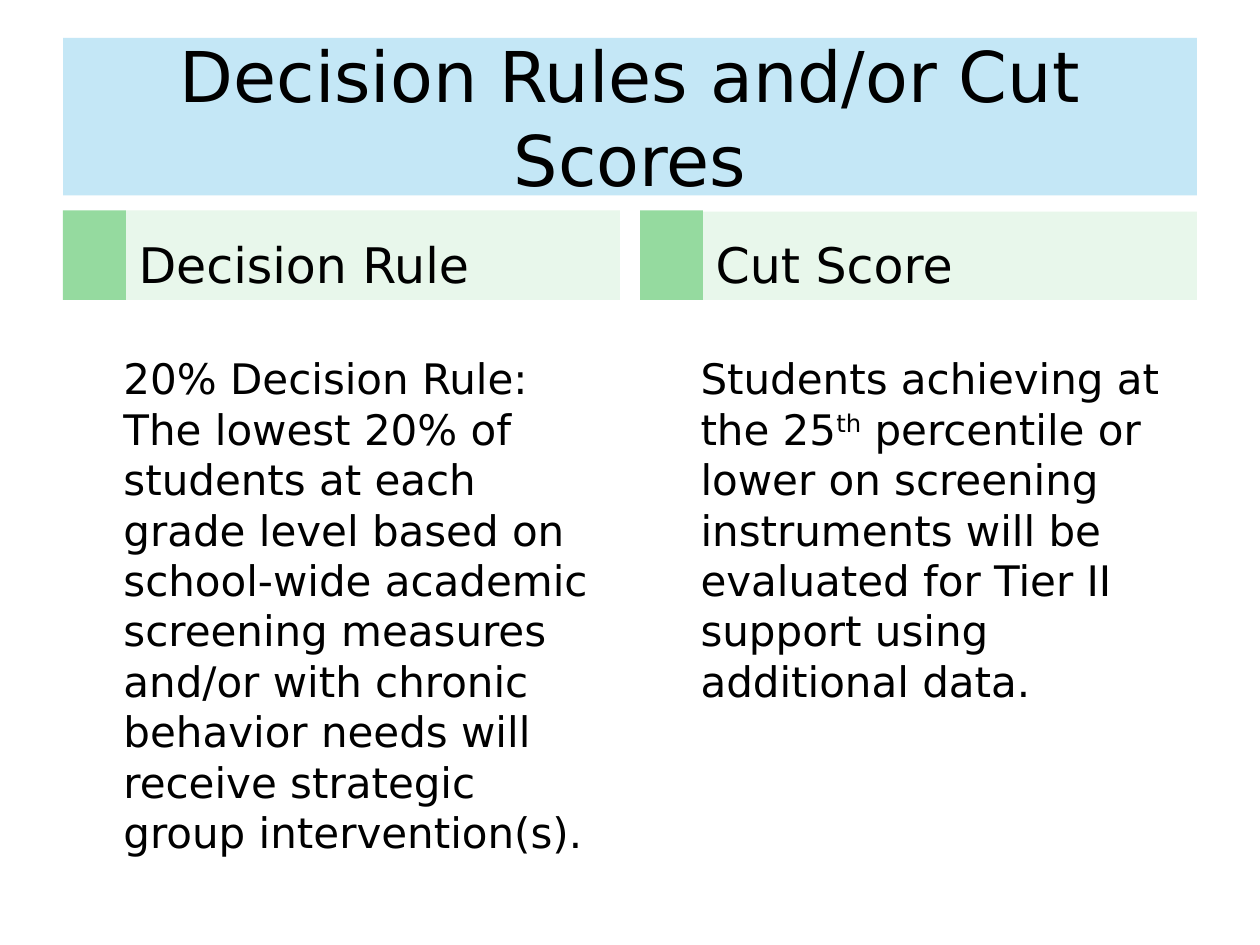
"""Build the slide on decision rules and cut scores."""
import pptx
import pptx.util
import pptx.dml.color
import pptx.enum.shapes
import pptx.enum.text
from lxml import etree

PX = 9144
FONT = "DejaVu Sans"
NS = "{http://schemas.openxmlformats.org/drawingml/2006/main}"
ALIGN = pptx.enum.text.PP_ALIGN
ANCHOR = pptx.enum.text.MSO_ANCHOR


def paint(fill, color):
    fill.solid()
    fill.fore_color.rgb = pptx.dml.color.RGBColor.from_string(color)


def write(shape, box, runs, size, anchor, align=ALIGN.LEFT, indent=0):
    shape.left, shape.top, shape.width, shape.height = [n * PX for n in box]
    frame = shape.text_frame
    frame.word_wrap = True
    frame.auto_size = pptx.enum.text.MSO_AUTO_SIZE.NONE
    frame.vertical_anchor = anchor
    para = frame.paragraphs[0]
    para.alignment = align
    para.space_before = pptx.util.Pt(0)
    props = para._p.get_or_add_pPr()
    props.set("marL", str(indent * PX))
    props.set("indent", "0")
    etree.SubElement(props, NS + "buNone")
    for text, base in runs:
        run = para.add_run()
        run.text = text
        run.font.name = FONT
        run.font.size = pptx.util.Pt(size)
        run.font.bold = False
        paint(run.font.fill, "000000")
        if base:
            run.font._element.set("baseline", str(base * 1000))


deck = pptx.Presentation()
deck.slide_width, deck.slide_height = 1000 * PX, 750 * PX
slide = deck.slides.add_slide(deck.slide_layouts[4])
holders = slide.placeholders

title = slide.shapes.title
write(title, (50, 30, 900, 125), [("Decision Rules and/or Cut Scores", 0)],
      40, ANCHOR.MIDDLE, ALIGN.CENTER)
paint(title.fill, "A9DCF2")
tint = title._element.spPr.find(f"{NS}solidFill/{NS}srgbClr")
etree.SubElement(tint, NS + "alpha").set("val", "68000")

columns = [
    (50, 167, 1, "Decision Rule", [
        ("20% Decision Rule: The lowest 20% of students at each grade level "
         "based on school-wide academic screening measures and/or with "
         "chronic behavior needs will receive strategic group "
         "intervention(s).", 0)]),
    (508, 168, 3, "Cut Score", [
        ("Students achieving at the 25", 0),
        ("th", 30),
        (" percentile or lower on screening instruments will be evaluated "
         "for Tier II support using additional data.", 0)]),
]
for left, top, slot, name, runs in columns:
    tab = slide.shapes.add_shape(
        pptx.enum.shapes.MSO_SHAPE.RECTANGLE,
        left * PX, 167 * PX, 50 * PX, 71 * PX)
    tab.shadow.inherit = False
    tab.line.fill.background()
    paint(tab.fill, "95DA9F")
    head = holders[slot]
    write(head, (left + 50, top, 392, 238 - top), [(name, 0)],
          28, ANCHOR.BOTTOM)
    paint(head.fill, "E8F7EB")
    write(holders[slot + 1], (left, 275, 442, 432), runs,
          24, ANCHOR.TOP, indent=38)

deck.save("out.pptx")
